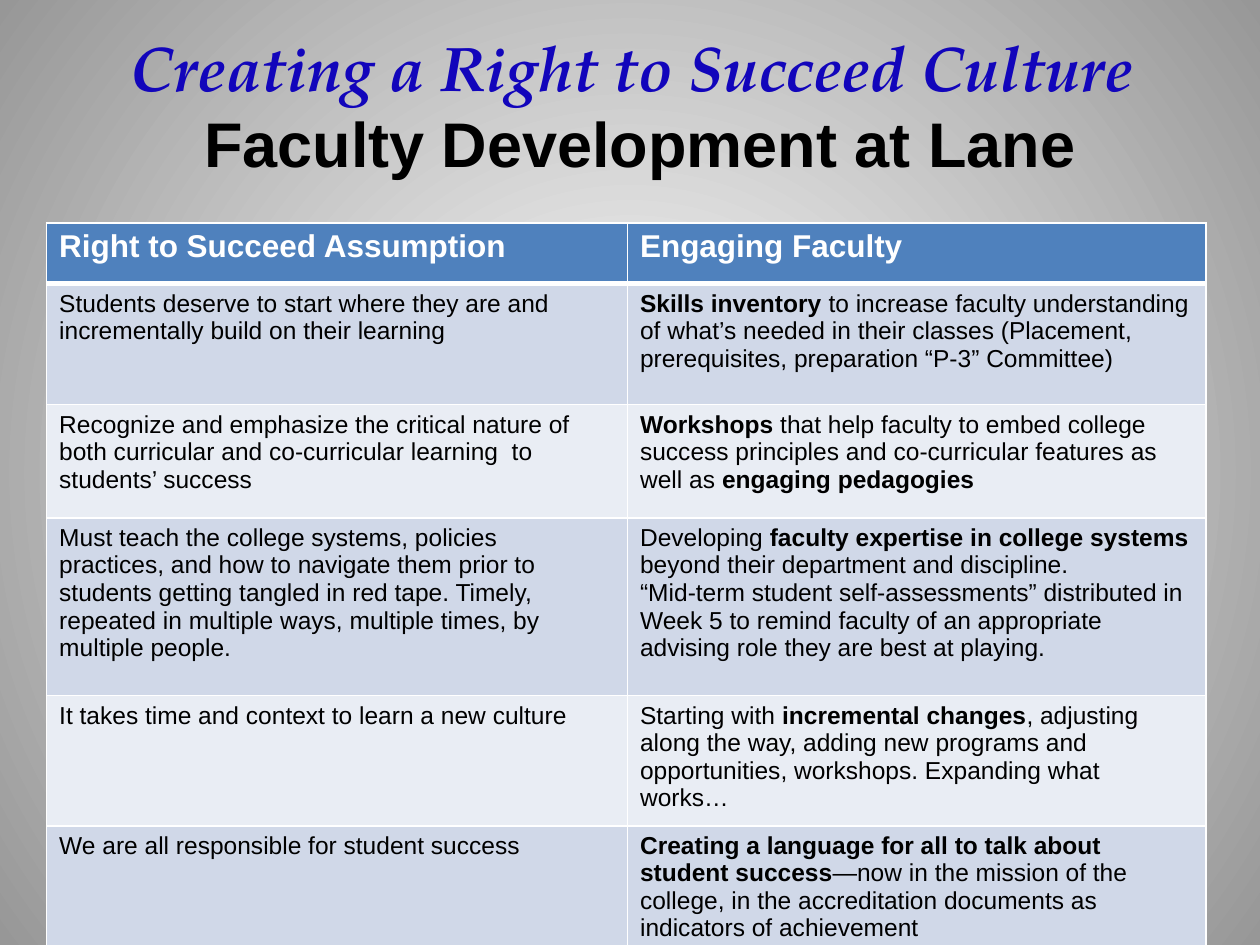
from lxml import etree
from pptx import Presentation
from pptx.dml.color import RGBColor
from pptx.enum.text import MSO_AUTO_SIZE, PP_ALIGN
from pptx.oxml.ns import qn
from pptx.util import Inches, Pt

COLORS = {
    "title": "1205BB", "text": "000000", "white": "FFFFFF", "edge": "979797",
    "header": "4F81BD", "band_dark": "D0D8E8", "band_light": "E9EDF4",
}

# Paragraphs are split by line ends; ** switches bold on and off
ROWS = [
    ("**Right to Succeed Assumption**", "**Engaging Faculty**"),
    ("Students deserve to start where they are and incrementally build on their learning",
     "**Skills inventory **to increase faculty understanding of what’s needed in their "
     "classes (Placement, prerequisites, preparation “P-3” Committee)"),
    ("Recognize and emphasize the critical nature of both curricular and co-curricular "
     "learning  to students’ success",
     "**Workshops** that help faculty to embed college success principles and "
     "co-curricular features as well as **engaging pedagogies**"),
    ("Must teach the college systems, policies\n"
     "practices, and how to navigate them prior to students getting tangled in red tape. "
     "Timely, repeated in multiple ways, multiple times, by multiple people.",
     "Developing **faculty expertise in college systems **beyond their department and "
     "discipline.\n"
     "“Mid-term student self-assessments” distributed in Week 5 to remind faculty of an "
     "appropriate advising role they are best at playing."),
    ("It takes time and context to learn a new culture",
     "Starting with **incremental changes**, adjusting along the way, adding new programs "
     "and opportunities, workshops. Expanding what works…"),
    ("We are all responsible for student success",
     "**Creating a language for all to talk about student success**—now in the mission of "
     "the college, in the accreditation documents as indicators of achievement"),
]
COL_WIDTHS = [4.61, 4.59]
ROW_HEIGHTS = [0.48, 0.96, 0.9, 1.41, 0.98, 0.96]


class SlideBuilder:
    body_font = "Arial"
    title_font = "TeX Gyre Pagella"

    def __init__(self, prs):
        self.s = prs.slides.add_slide(prs.slide_layouts[6])

    def style(self, r, size, color, bold=False, italic=False, font=None):
        r.font.name = font or self.body_font
        r.font.size = Pt(size)
        r.font.bold = bold
        r.font.italic = italic
        r.font.color.rgb = RGBColor.from_string(COLORS[color])

    def background(self, center, edge):
        fill = self.s.background.fill
        fill.gradient()
        for stop, position, color in zip(fill.gradient_stops, (0, 1), (center, edge)):
            stop.position = position
            stop.color.rgb = RGBColor.from_string(COLORS[color])
        # Turn the linear gradient into a circular one
        grad = self.s.element.find(".//" + qn("a:gradFill"))
        grad.remove(grad.find(qn("a:lin")))
        circle = etree.SubElement(grad, qn("a:path"), path="circle")
        etree.SubElement(circle, qn("a:fillToRect"), l="50000", t="50000",
                         r="50000", b="50000")

    def title(self, first, second, left, top, width, height):
        box = self.s.shapes.add_textbox(Inches(left), Inches(top),
                                        Inches(width), Inches(height))
        tf = box.text_frame
        tf.word_wrap = True
        tf.auto_size = MSO_AUTO_SIZE.SHAPE_TO_FIT_TEXT
        p = tf.paragraphs[0]
        p.text = f"{first}\v{second}"
        p.alignment = PP_ALIGN.CENTER
        self.style(p.runs[0], 36, "title", True, True, self.title_font)
        self.style(p.runs[1], 36, "text", True)

    def borders(self, cell, top, bottom):
        tc_pr = cell._tc.get_or_add_tcPr()
        for side, width in (("L", 1), ("R", 1), ("T", top), ("B", bottom)):
            ln = etree.SubElement(tc_pr, qn(f"a:ln{side}"), w=str(Pt(width)))
            solid = etree.SubElement(ln, qn("a:solidFill"))
            etree.SubElement(solid, qn("a:srgbClr"), val=COLORS["white"])

    def cell(self, cell, text, size, color, fill):
        tf = cell.text_frame
        for i, line in enumerate(text.split("\n")):
            p = tf.paragraphs[0] if i == 0 else tf.add_paragraph()
            for j, part in enumerate(line.split("**")):
                if part:
                    r = p.add_run()
                    r.text = part
                    self.style(r, size, color, bold=j % 2 == 1)
        cell.fill.solid()
        cell.fill.fore_color.rgb = RGBColor.from_string(COLORS[fill])

    def table(self, rows, left, top, widths, heights):
        table = self.s.shapes.add_table(
            len(rows), len(widths), Inches(left), Inches(top),
            Inches(sum(widths)), Inches(sum(heights))).table
        for column, width in zip(table.columns, widths):
            column.width = Inches(width)
        for i, (texts, height) in enumerate(zip(rows, heights)):
            table.rows[i].height = Inches(height)
            if i == 0:
                look = (18, "white", "header")
            else:
                look = (14, "text", "band_dark" if i % 2 else "band_light")
            for j, text in enumerate(texts):
                cell = table.cell(i, j)
                # Thick rule between header and body
                self.borders(cell, 3 if i == 1 else 1, 3 if i == 0 else 1)
                self.cell(cell, text, *look)


def main():
    prs = Presentation()
    prs.slide_width, prs.slide_height = Inches(10), Inches(7.5)
    slide = SlideBuilder(prs)

    # Background and heading
    slide.background("white", "edge")
    slide.title("Creating a Right to Succeed Culture ", "Faculty Development at Lane",
                0.58, 0.18, 9, 1.31)

    # Assumptions and how faculty are engaged
    slide.table(ROWS, 0.37, 1.77, COL_WIDTHS, ROW_HEIGHTS)

    prs.save("out.pptx")


if __name__ == "__main__":
    main()
